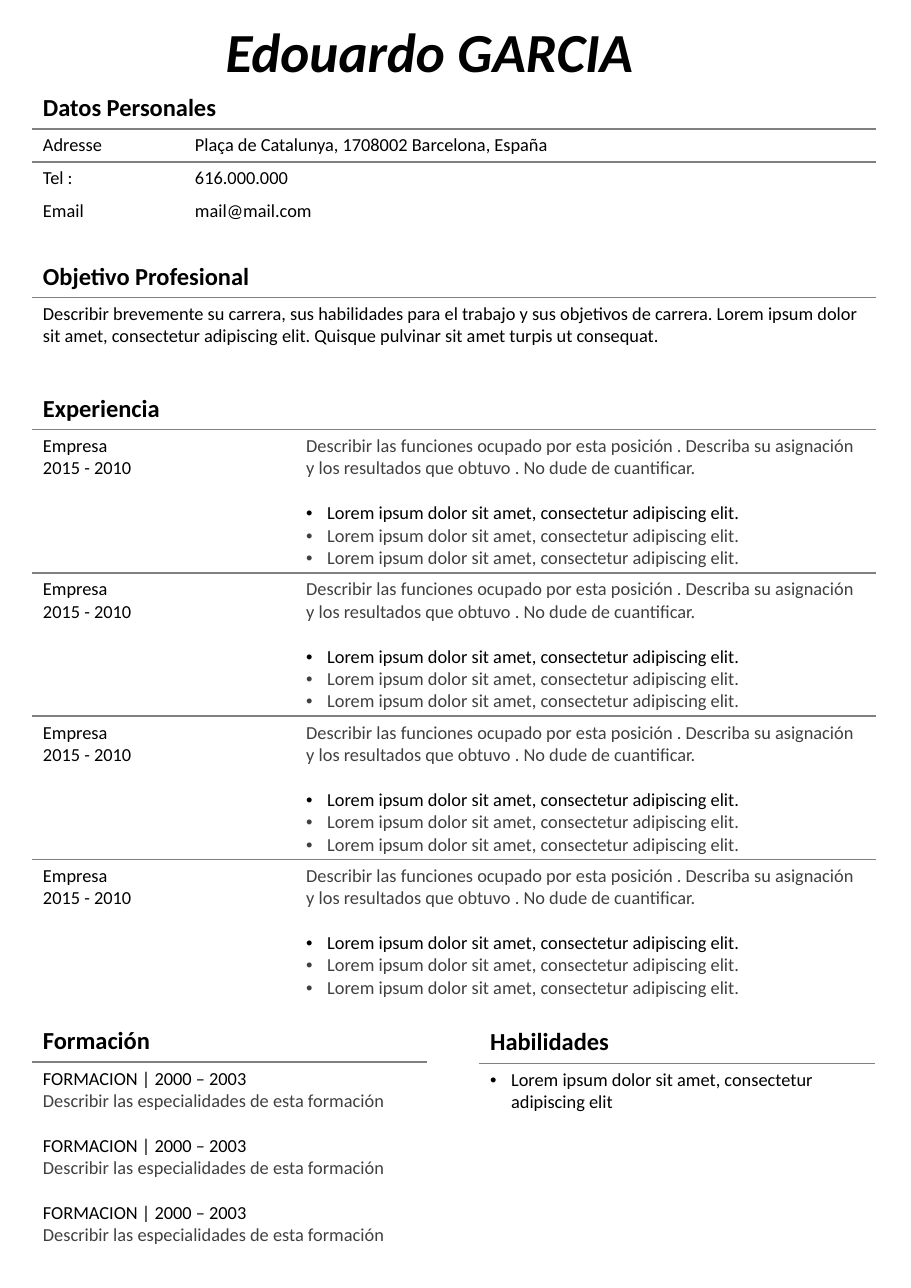
from lxml import etree
from pptx import Presentation
from pptx.dml.color import RGBColor
from pptx.oxml.ns import qn
from pptx.util import Inches, Pt

BLACK = RGBColor(0x00, 0x00, 0x00)
DARK = RGBColor(0x40, 0x40, 0x40)
RULE = RGBColor(0x80, 0x80, 0x80)
FONT = "Calibri"
PLAIN_TABLE = "{2D5ABB26-0587-4C30-8999-92F81FD0307C}"
LEFT, WIDTH, RIGHT = 0.29, 7.66, 4.35
HEADING, LINE = 0.37, 0.3
BLANK_LINE = 14.65

DUTY = ("Describir las funciones ocupado por esta posición . Describa su asignación "
        "y los resultados que obtuvo . No dude de cuantificar.")
LOREM = "Lorem ipsum dolor sit amet, consectetur adipiscing elit."
COURSE = "FORMACION | 2000 – 2003"
COURSE_NOTE = "Describir las especialidades de esta formación"
GOAL = ("Describir brevemente su carrera, sus habilidades para el trabajo y sus objetivos "
        "de carrera. Lorem ipsum dolor sit amet, consectetur adipiscing elit. "
        "Quisque pulvinar sit amet turpis ut consequat.")


def write(frame, lines, size=12, bold=False):
    for index, (text, color, bullet, gap) in enumerate(lines):
        para = frame.paragraphs[0] if index == 0 else frame.add_paragraph()
        para.text = text
        if bullet:
            properties = para._p.get_or_add_pPr()
            properties.set("marL", str(Inches(0.19)))
            properties.set("indent", str(-Inches(0.19)))
            etree.SubElement(properties, qn("a:buFont"), typeface="Arial")
            etree.SubElement(properties, qn("a:buChar"), char="•")
        if gap:
            para.space_after = Pt(BLANK_LINE)
        para.font.name = FONT
        para.font.size = Pt(size)
        para.font.bold = bold
        para.font.color.rgb = color


def rule(cell, side):
    border = etree.Element(qn("a:" + side), w=str(Pt(1)))
    fill = etree.SubElement(border, qn("a:solidFill"))
    etree.SubElement(fill, qn("a:srgbClr"), val=str(RULE))
    cell._tc.get_or_add_tcPr().insert(0, border)


plain = (BLACK, False, False)
company = [("Empresa", *plain), ("2015 - 2010", *plain)]
duties = [(DUTY, DARK, False, True), (LOREM, BLACK, True, False),
          (LOREM, DARK, True, False), (LOREM, DARK, True, False)]
contacts = [("Adresse", "Plaça de Catalunya, 1708002 Barcelona, España"),
            ("Tel :", "616.000.000"),
            ("Email", "mail@mail.com")]
courses = []
for number in range(3):
    courses += [(COURSE, *plain), (COURSE_NOTE, DARK, False, number < 2)]

sections = [
    ("Datos Personales", LEFT, 0.8, [1.38, 6.28], LINE, 0,
     [[[(text, *plain)] for text in contact] for contact in contacts]),
    ("Objetivo Profesional", LEFT, 2.33, [WIDTH], 0.5, None, [[[(GOAL, *plain)]]]),
    ("Experiencia", LEFT, 3.53, [2.39, 5.27], 1.3, 0, [[company, duties]] * 4),
    ("Formación", LEFT, 9.26, [1.36, 2.23], 1.7, 1, [[courses]]),
    ("Habilidades", RIGHT, 9.27, [1.94, 1.65], 0.5, 1,
     [[[(LOREM.rstrip("."), BLACK, True, False)]]]),
]

deck = Presentation()
deck.slide_width, deck.slide_height = Inches(8.27), Inches(11.69)
page = deck.slides.add_slide(deck.slide_layouts[6])

name_box = page.shapes.add_textbox(Inches(1.95), Inches(0.11), Inches(3.94), Inches(0.71))
name_box.text_frame.word_wrap = False
write(name_box.text_frame, [("Edouardo GARCIA", *plain)], 36, True)
name_box.text_frame.paragraphs[0].font.italic = True

for title, left, top, widths, row_height, merged_row, entries in sections:
    last_row = len(entries)
    table = page.shapes.add_table(
        last_row + 1, len(widths), Inches(left), Inches(top),
        Inches(sum(widths)), Inches(HEADING + row_height * last_row)).table
    table.first_row = False
    table.horz_banding = False
    table._tbl.tblPr.find(qn("a:tableStyleId")).text = PLAIN_TABLE
    ruled_rows = last_row if title == "Experiencia" else 1
    for column, width in zip(table.columns, widths):
        column.width = Inches(width)
    for index, row in enumerate(table.rows):
        row.height = Inches(row_height if index else HEADING)
        for cell in row.cells:
            cell.fill.background()
            cell.margin_top, cell.margin_bottom = Inches(0.05), Inches(0.03)
            if index < ruled_rows:
                rule(cell, "lnB")
            if 0 < index <= ruled_rows:
                rule(cell, "lnT")
    if merged_row is not None:
        table.cell(merged_row, 0).merge(table.cell(merged_row, len(widths) - 1))
    write(table.cell(0, 0).text_frame, [(title, *plain)], 16, True)
    for row_index, entry in enumerate(entries, 1):
        for column_index, lines in enumerate(entry):
            write(table.cell(row_index, column_index).text_frame, lines)

deck.save("out.pptx")
